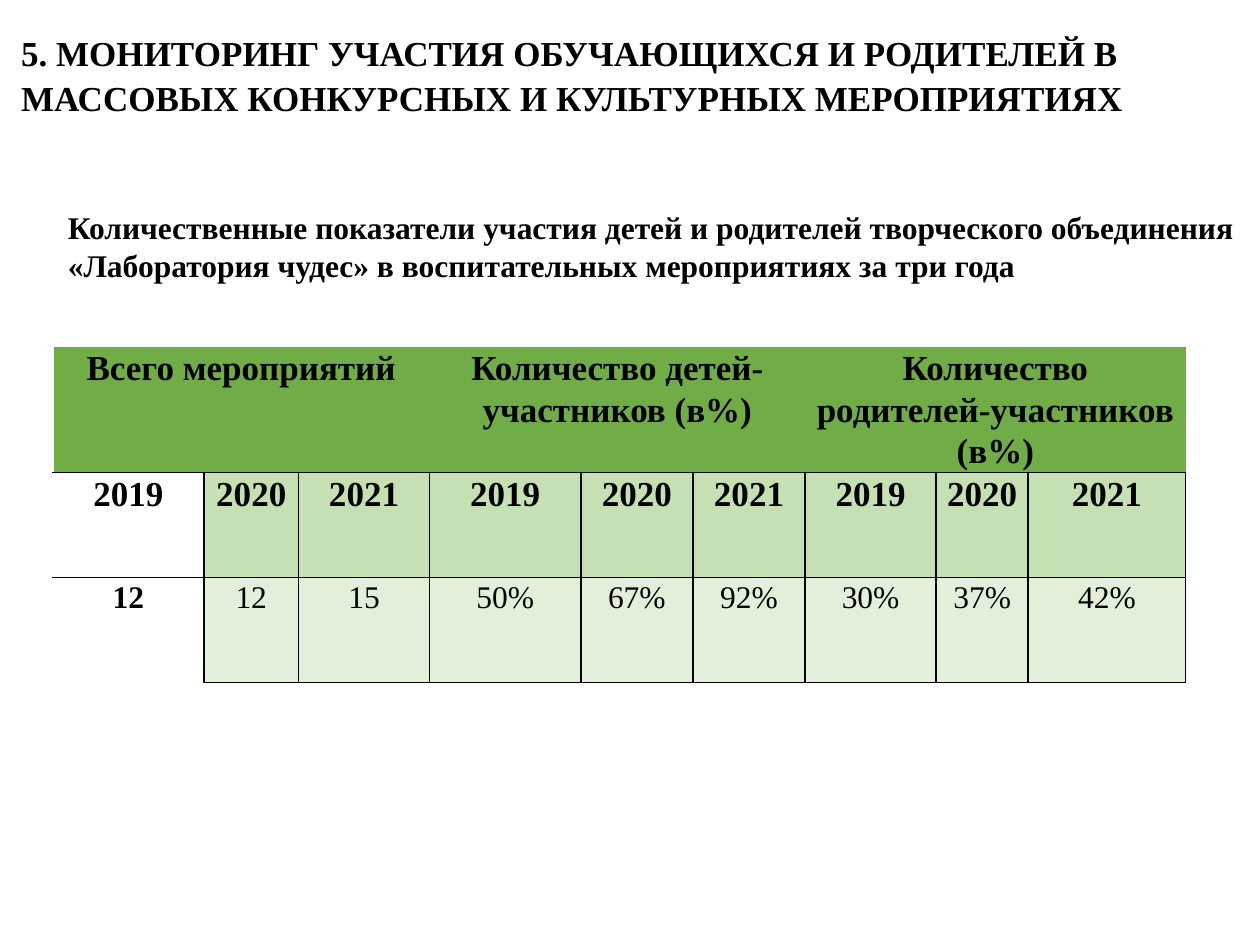
from dataclasses import dataclass

from lxml import etree
from pptx import Presentation
from pptx.dml.color import RGBColor
from pptx.enum.shapes import MSO_SHAPE
from pptx.enum.text import MSO_ANCHOR, PP_ALIGN
from pptx.oxml.ns import qn
from pptx.util import Pt

RECT = MSO_SHAPE.RECTANGLE
LEFT, MID = PP_ALIGN.LEFT, PP_ALIGN.CENTER
TOP, CORE = MSO_ANCHOR.TOP, MSO_ANCHOR.MIDDLE
FONT = "Times New Roman"
HUES = {"ink": "000000", "page": "FFFFFF", "head": "70AD47",
        "year": "C5E0B3", "data": "E2EFD9"}
WIDTHS = (86.4, 54, 74.9, 86.4, 64.1, 64.1, 74.9, 52.6, 90)
SPAN = 3


@dataclass
class Row:
    tall: float
    fill: str
    size: int
    bold: bool
    words: list[str]


@dataclass
class Box:
    left: float
    top: float
    wide: float
    tall: float
    size: int
    text: str
    fill: str | None = None
    anchor: MSO_ANCHOR = TOP
    form: dict | None = None


ROWS = [
    Row(72, "head", 20, True, ["Всего мероприятий", "Количество детей-участников (в%)",
                               "Количество родителей-участников (в%)"]),
    Row(60, "year", 20, True, ["2019", "2020", "2021"] * 3),
    Row(60, "data", 18, False, ["12", "12", "15", "50%", "67%", "92%", "30%", "37%", "42%"]),
]
TITLE = Box(5, 12.25, 708.5, 59, 20,
            "5. МОНИТОРИНГ УЧАСТИЯ ОБУЧАЮЩИХСЯ И РОДИТЕЛЕЙ В МАССОВЫХ "
            "КОНКУРСНЫХ И КУЛЬТУРНЫХ МЕРОПРИЯТИЯХ", "page", CORE,
            {"line_spacing": 1.07, "space_after": Pt(8)})
NOTE = Box(31.7, 115.2, 764, 51, 18,
           "Количественные показатели участия детей и родителей творческого объединения "
           "«Лаборатория чудес» в воспитательных мероприятиях за три года")


def hue(name: str) -> RGBColor:
    return RGBColor.from_string(HUES[name])


def apply(item, form: dict) -> None:
    for key, value in form.items():
        setattr(item, key, value)


def write(frame, text: str, size: int, bold: bool, form: dict) -> None:
    para = frame.paragraphs[0]
    apply(para, form)
    run = para.add_run()
    run.text = text
    apply(run.font, {"name": FONT, "size": Pt(size), "bold": bold})
    run.font.color.rgb = hue("ink")


def draw_box(slide, box: Box) -> None:
    place = [Pt(n) for n in (box.left, box.top, box.wide, box.tall)]
    if box.fill:
        shape = slide.shapes.add_shape(RECT, *place)
        shape.shadow.inherit = False
        shape.fill.solid()
        shape.fill.fore_color.rgb = hue(box.fill)
        shape.line.fill.background()
    else:
        shape = slide.shapes.add_textbox(*place)
    apply(shape.text_frame, {"word_wrap": True, "vertical_anchor": box.anchor})
    write(shape.text_frame, box.text, box.size, True,
          {"alignment": LEFT, **(box.form or {})})


def edges(row: int, col: int) -> dict:
    first, last = col == 0, col == len(WIDTHS) - 1
    if row == 0:
        return {"L": "page" if first else None, "R": "page" if last else None,
                "T": "page", "B": "ink"}
    low = first and row == len(ROWS) - 1
    return {"L": "page" if first else "ink", "R": "ink",
            "T": "ink", "B": "page" if low else "ink"}


def rule(cell, sides: dict) -> None:
    props = cell._tc.get_or_add_tcPr()
    for side, name in sides.items():
        line = etree.SubElement(props, qn(f"a:ln{side}"), w=str(Pt(1)))
        if name:
            fill = etree.SubElement(line, qn("a:solidFill"))
            etree.SubElement(fill, qn("a:srgbClr"), val=HUES[name])
        else:
            etree.SubElement(line, qn("a:noFill"))


def draw_table(slide) -> None:
    high = sum(row.tall for row in ROWS)
    table = slide.shapes.add_table(len(ROWS), len(WIDTHS), Pt(30.2), Pt(198),
                                   Pt(sum(WIDTHS)), Pt(high)).table
    apply(table, {"first_row": False, "horz_banding": False})
    for col, wide in zip(table.columns, WIDTHS):
        col.width = Pt(wide)
    for r, row in enumerate(ROWS):
        table.rows[r].height = Pt(row.tall)
        step = SPAN if r == 0 else 1
        for c in range(len(WIDTHS)):
            cell = table.cell(r, c)
            apply(cell, {"margin_left": Pt(5), "margin_right": Pt(5),
                         "margin_top": 0, "margin_bottom": 0})
            rule(cell, edges(r, c))
            if r and c == 0:
                cell.fill.background()
            else:
                cell.fill.solid()
                cell.fill.fore_color.rgb = hue(row.fill)
            if c % step == 0:
                if step > 1:
                    cell.merge(table.cell(r, c + step - 1))
                write(cell.text_frame, row.words[c // step], row.size,
                      row.bold or c == 0, {"alignment": MID, "line_spacing": 1.07})


def main() -> None:
    deck = Presentation()
    apply(deck, {"slide_width": Pt(720), "slide_height": Pt(540)})
    slide = deck.slides.add_slide(deck.slide_layouts[6])
    draw_box(slide, TITLE)
    draw_table(slide)
    draw_box(slide, NOTE)
    deck.save("out.pptx")


if __name__ == "__main__":
    main()
